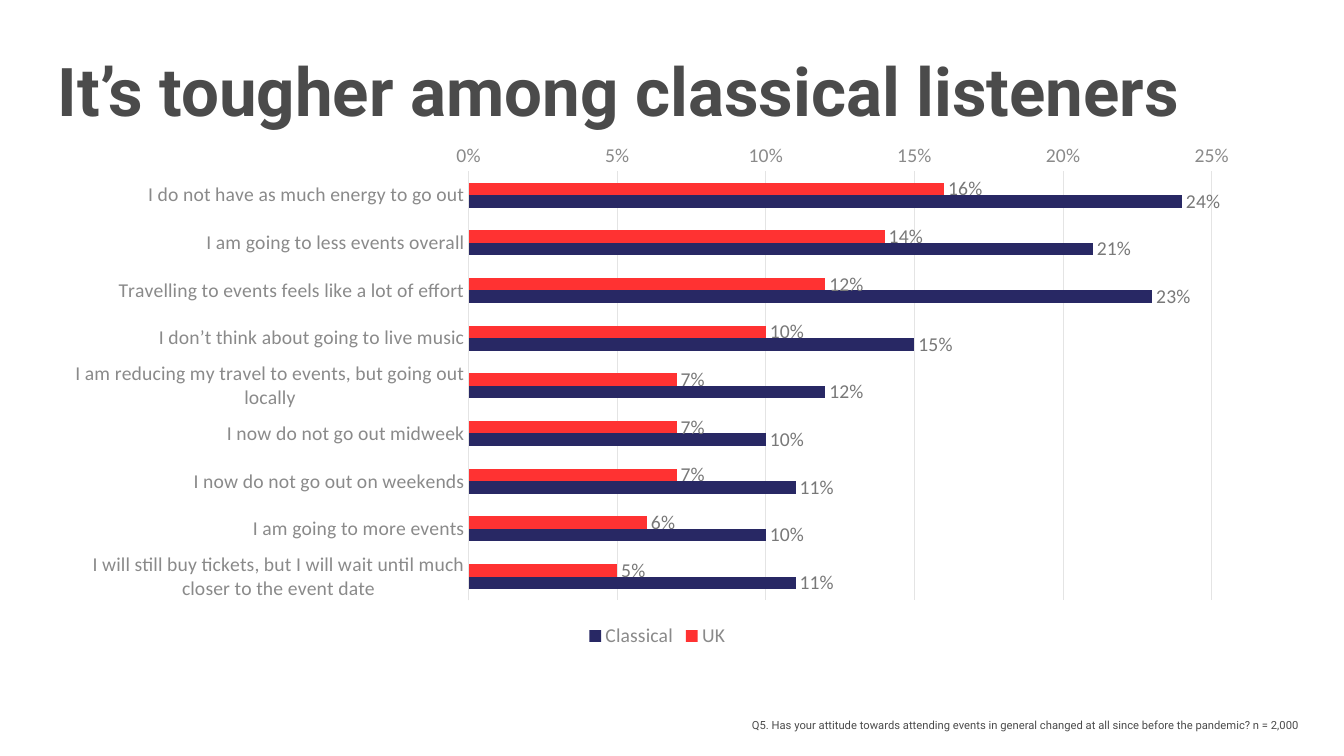
from dataclasses import dataclass

from lxml.etree import SubElement
from pptx import Presentation
from pptx.chart.chart import Chart
from pptx.chart.data import CategoryChartData
from pptx.dml.color import RGBColor
from pptx.enum.chart import (XL_CHART_TYPE, XL_LABEL_POSITION,
                             XL_LEGEND_POSITION, XL_TICK_MARK)
from pptx.enum.text import MSO_ANCHOR, PP_ALIGN
from pptx.oxml.ns import qn
from pptx.util import Emu, Inches, Pt

COLORS = {"text": "4B4B4B", "axis": "8A8A8A", "label": "787878",
          "grid": "E4E4E4", "red": "FF3232", "navy": "282864"}
SLIDE_W, SLIDE_H = Inches(13.33), Inches(7.5)


@dataclass(frozen=True)
class Box:
    """A place given as percentages of the slide's width and height."""
    left: float
    top: float
    width: float
    height: float

    def emu(self) -> tuple[Emu, Emu, Emu, Emu]:
        return (Emu(int(SLIDE_W * self.left / 100)), Emu(int(SLIDE_H * self.top / 100)),
                Emu(int(SLIDE_W * self.width / 100)), Emu(int(SLIDE_H * self.height / 100)))


@dataclass(frozen=True)
class Audience:
    name: str
    color: str
    percents: tuple[int, ...]


TITLE_BOX = Box(3.53, 5.73, 95.05, 12.13)
CHART_BOX = Box(5.03, 17.87, 87.77, 68.4)
NOTE_BOX = Box(28.58, 94.27, 68.87, 3.2)
PLOT_SHARES = {"x": 0.34, "y": 0.07, "w": 0.63, "h": 0.83}

ATTITUDES = (
    "I do not have as much energy to go out",
    "I am going to less events overall",
    "Travelling to events feels like a lot of effort",
    "I don’t think about going to live music",
    "I am reducing my travel to events, but going out locally",
    "I now do not go out midweek",
    "I now do not go out on weekends",
    "I am going to more events",
    "I will still buy tickets, but I will wait until much closer to the event date",
)
AUDIENCES = (
    Audience("UK", "red", (16, 14, 12, 10, 7, 7, 7, 6, 5)),
    Audience("Classical", "navy", (24, 21, 23, 15, 12, 10, 11, 10, 11)),
)


def rgb(name: str) -> RGBColor:
    return RGBColor.from_string(COLORS[name])


def set_font(font, name: str, size: float, color: str, bold: bool = False) -> None:
    font.name, font.size, font.bold = name, Pt(size), bold
    font.color.rgb = rgb(color)


def write(s, box: Box, text: str, size: float, align: PP_ALIGN, bold: bool = False) -> None:
    s.left, s.top, s.width, s.height = box.emu()
    tf = s.text_frame
    tf.word_wrap = True
    tf.vertical_anchor = MSO_ANCHOR.MIDDLE
    p = tf.paragraphs[0]
    p.text, p.alignment = text, align
    set_font(p.font, "Roboto", size, "text", bold)


def place_plot(chart: Chart) -> None:
    """Fix the inner plot area as shares of the chart's size."""
    area = chart._chartSpace.chart.plotArea
    for old in area.findall(qn("c:layout")):
        area.remove(old)
    layout = SubElement(area, qn("c:layout"))
    area.insert(0, layout)
    manual = SubElement(layout, qn("c:manualLayout"))
    settings = {"layoutTarget": "inner", "xMode": "edge", "yMode": "edge", **PLOT_SHARES}
    for tag, value in settings.items():
        SubElement(manual, qn(f"c:{tag}")).set("val", str(value))


def style_axes(chart: Chart) -> None:
    for axis in (chart.category_axis, chart.value_axis):
        axis.major_tick_mark = axis.minor_tick_mark = XL_TICK_MARK.NONE
        set_font(axis.tick_labels.font, "Calibri", 14, "axis")
    chart.category_axis.reverse_order = True
    values = chart.value_axis
    values.minimum_scale, values.maximum_scale, values.major_unit = 0, 0.25, 0.05
    values.tick_labels.number_format = "0%"
    values.tick_labels.number_format_is_linked = False
    values.format.line.fill.background()
    for line in (chart.category_axis.format.line, values.major_gridlines.format.line):
        line.color.rgb, line.width = rgb("grid"), Pt(0.75)


def add_attitude_chart(slide) -> None:
    data = CategoryChartData(number_format="0%")
    data.categories = ATTITUDES
    for audience in AUDIENCES:
        data.add_series(audience.name, [n / 100 for n in audience.percents])
    chart = slide.shapes.add_chart(XL_CHART_TYPE.BAR_CLUSTERED, *CHART_BOX.emu(), data).chart
    set_font(chart.font, "Calibri", 14, "text")
    chart.has_title = False
    chart.has_legend = True
    chart.legend.position = XL_LEGEND_POSITION.BOTTOM
    chart.legend.include_in_layout = False
    set_font(chart.legend.font, "Calibri", 14, "axis")
    style_axes(chart)
    place_plot(chart)

    plot = chart.plots[0]
    plot.gap_width, plot.overlap, plot.vary_by_categories = 182, 0, False
    for series, audience in zip(plot.series, AUDIENCES):
        series.format.fill.solid()
        series.format.fill.fore_color.rgb = rgb(audience.color)
        labels = series.data_labels
        labels.show_value = True
        labels.position = XL_LABEL_POSITION.OUTSIDE_END
        labels.number_format, labels.number_format_is_linked = "0%", False
        set_font(labels.font, "Calibri", 14, "label")


def main() -> None:
    prs = Presentation()
    prs.slide_width, prs.slide_height = SLIDE_W, SLIDE_H
    slide = prs.slides.add_slide(prs.slide_layouts[5])
    write(slide.shapes.title, TITLE_BOX, "It’s tougher among classical listeners",
          48, PP_ALIGN.LEFT, bold=True)
    note = slide.shapes.add_textbox(*NOTE_BOX.emu())
    write(note, NOTE_BOX, "Q5. Has your attitude towards attending events in general changed "
          "at all since before the pandemic? n = 2,000", 8, PP_ALIGN.RIGHT)
    add_attitude_chart(slide)
    prs.save("out.pptx")


if __name__ == "__main__":
    main()
